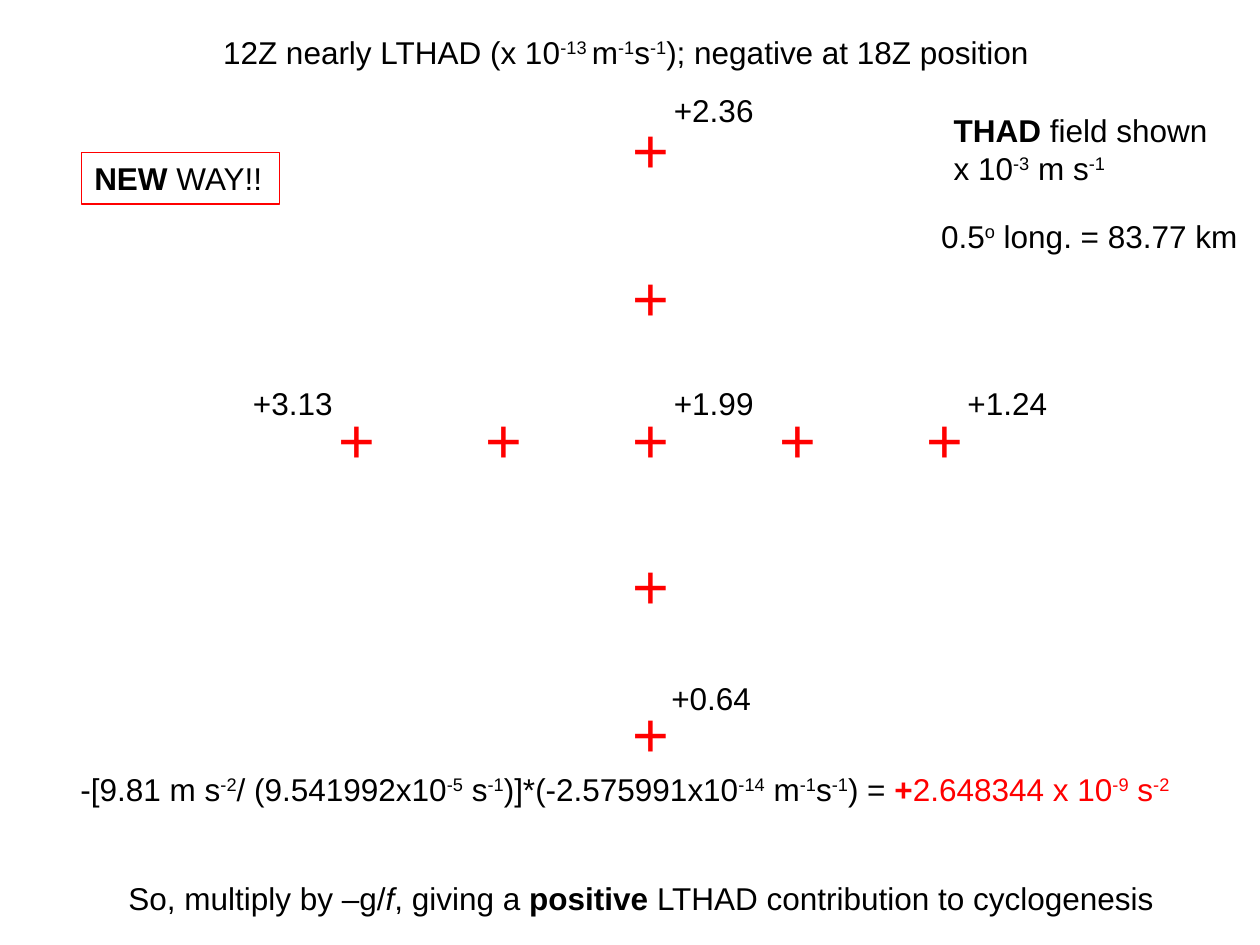
"""Build the LTHAD slide: nine grid points, their values and the resulting calculation."""
from dataclasses import dataclass, field
from typing import Optional

from lxml import etree
from pptx import Presentation
from pptx.dml.color import RGBColor
from pptx.enum.text import MSO_ANCHOR, MSO_AUTO_SIZE, PP_ALIGN
from pptx.oxml.ns import qn
from pptx.util import Inches, Pt

TOP = MSO_ANCHOR.TOP
GROW = MSO_AUTO_SIZE.SHAPE_TO_FIT_TEXT
LEFT = PP_ALIGN.LEFT


@dataclass(frozen=True)
class Theme:
    """Colours, font and type sizes of the slide."""
    font: str = "Arial"
    ink: RGBColor = RGBColor(0, 0, 0)
    accent: RGBColor = RGBColor(255, 0, 0)
    paper: RGBColor = RGBColor(255, 255, 255)
    body: float = 18
    marker: float = 36
    outline: float = 0.75


THEME = Theme()


@dataclass(frozen=True)
class Span:
    """A piece of text with its format values."""
    text: str
    style: dict = field(default_factory=dict)
    raised: bool = False
    color: RGBColor = THEME.ink


@dataclass(frozen=True)
class Label:
    """A text box: place in inches, paragraphs of spans and box format."""
    left: float
    top: float
    width: float
    height: float
    paras: list[list[Span]]
    filled: bool = True
    opacity: Optional[int] = None
    outlined: bool = False
    wrap: bool = False


BOLD = {"bold": True}
ITALIC = {"italic": True}


def scientific(marked: str, color: RGBColor = THEME.ink) -> list[Span]:
    """Split text at bars into alternating normal and raised spans."""
    return [Span(piece, raised=index % 2 == 1, color=color)
            for index, piece in enumerate(marked.split("|")) if piece]


def write_para(para, spans: list[Span]) -> None:
    """Write formatted spans into a paragraph."""
    para.alignment = LEFT
    for span in spans:
        run = para.add_run()
        run.text = span.text
        values = {"name": THEME.font, "size": Pt(THEME.body)} | span.style
        for name, value in values.items():
            setattr(run.font, name, value)
        run.font.color.rgb = span.color
        if span.raised:
            run.font._element.set("baseline", "30000")


def format_box(box, label: Label) -> None:
    """Place a box and give it its fill, outline and text."""
    for name in ("left", "top", "width", "height"):
        setattr(box, name, Inches(getattr(label, name)))
    if label.filled:
        box.fill.solid()
        box.fill.fore_color.rgb = THEME.paper
    if label.opacity is not None:
        color = box._element.spPr.find(qn("a:solidFill"))[0]
        etree.SubElement(color, qn("a:alpha"), val=str(label.opacity * 1000))
    if label.outlined:
        box.line.color.rgb = THEME.accent
        box.line.width = Pt(THEME.outline)
    frame = box.text_frame
    values = {"word_wrap": label.wrap, "auto_size": GROW, "vertical_anchor": TOP}
    for name, value in values.items():
        setattr(frame, name, value)
    for index, spans in enumerate(label.paras):
        para = frame.add_paragraph() if index else frame.paragraphs[0]
        write_para(para, spans)


def add_label(slide, label: Label) -> None:
    """Add a text box for a label."""
    format_box(slide.shapes.add_textbox(0, 0, 0, 0), label)


def value_label(left: float, top: float, text: str) -> Label:
    """Describe the value beside a grid point."""
    return Label(left, top, 0.84, 0.4, [[Span(text)]], opacity=85)


def marker_label(left: float, top: float) -> Label:
    """Describe a red cross at a grid point."""
    cross = Span("+", {"size": Pt(THEME.marker)}, color=THEME.accent)
    return Label(left, top, 0.42, 0.71, [[cross]], filled=False, wrap=True)


TITLE = Label(1.67, 0.21, 6.73, 0.4, [
    scientific("12Z nearly LTHAD (x 10|-13 |m|-1|s|-1|); negative at 18Z position")])

NOTES = [
    Label(0.92, 6.93, 8.35, 0.4, [[
        Span("So, multiply by –g/"), Span("f", ITALIC), Span(", giving a "),
        Span("positive", BOLD), Span(" LTHAD contribution to cyclogenesis")]]),
    Label(0.65, 1.21, 1.57, 0.41, [[Span("NEW", BOLD), Span(" WAY!!")]], outlined=True),
    Label(7.47, 0.83, 2.22, 0.7, [
        [Span("THAD", BOLD), Span(" field shown")], scientific("x 10|-3| m s|-1")]),
    Label(7.37, 1.67, 2.59, 0.4, [scientific("0.5|o| long. = 83.77 km")]),
]

VALUES = [
    value_label(7.58, 3, "+1.24"),
    value_label(1.91, 3, "+3.13"),
    value_label(5.25, 3, "+1.99"),
    value_label(5.25, 0.67, "+2.36"),
    value_label(5.23, 5.34, "+0.64"),
]

CENTER_LEFT, CENTER_TOP, STEP = 4.92, 3.13, 1.167
ROW = [marker_label(CENTER_LEFT + STEP * offset, CENTER_TOP) for offset in range(-2, 3)]
COLUMN = [marker_label(CENTER_LEFT, top) for top in (0.83, 2, 4.29, 5.46)]

RESULT = Label(0.54, 6.06, 9.16, 0.4, [
    scientific("-[9.81 m s|-2|/ (9.541992x10|-5| s|-1|)]*(-2.575991x10|-14| m|-1|s|-1|) = ")
    + [Span("+", BOLD, color=THEME.accent)]
    + scientific("2.648344 x 10|-9| s|-2", THEME.accent)])


def main() -> None:
    """Build and save the deck."""
    deck = Presentation()
    deck.slide_width, deck.slide_height = Inches(10), Inches(7.5)
    page = deck.slides.add_slide(deck.slide_layouts[5])
    format_box(page.shapes.title, TITLE)
    for label in [*NOTES, *VALUES, *ROW, *COLUMN, RESULT]:
        add_label(page, label)
    deck.save("out.pptx")


if __name__ == "__main__":
    main()
